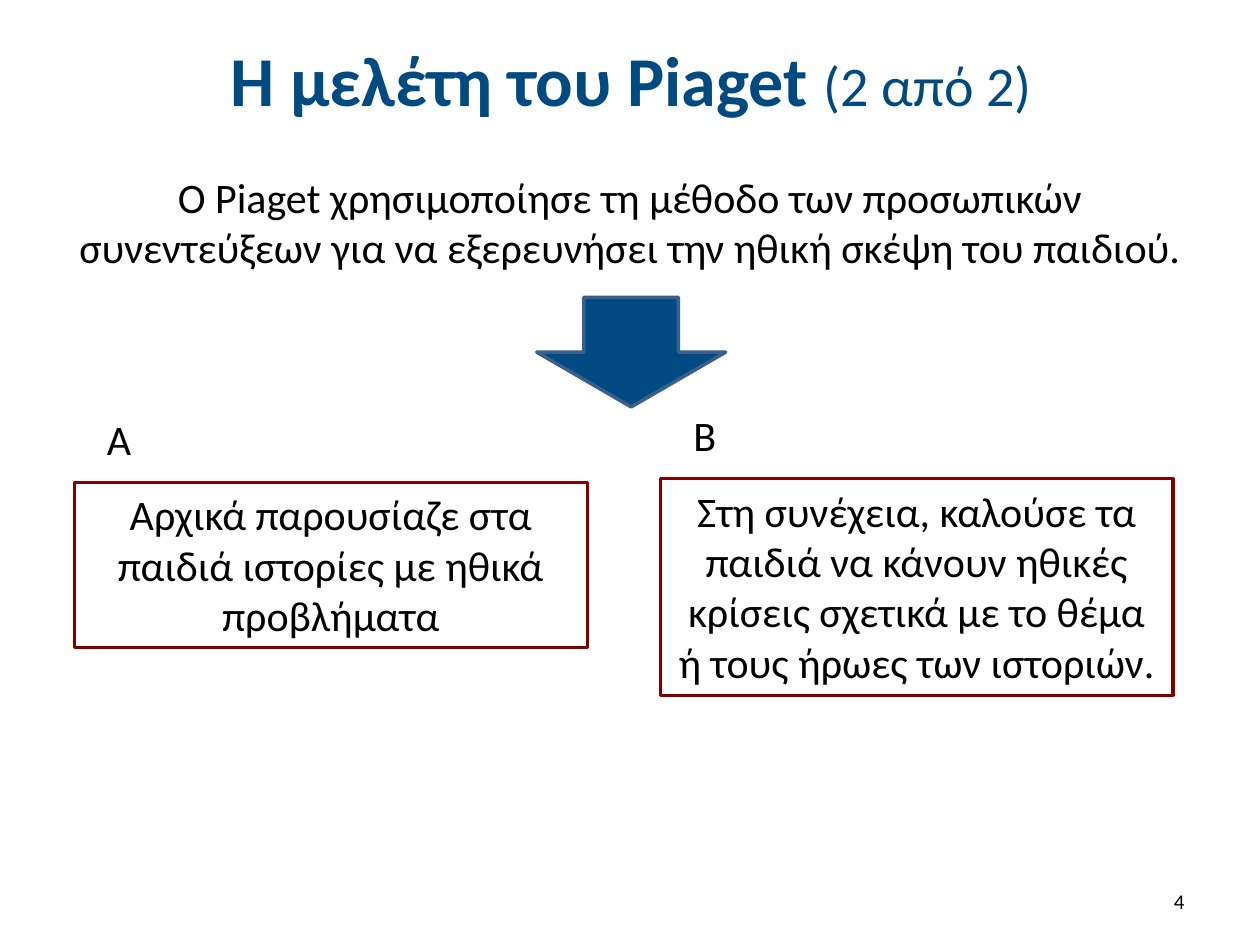
from pptx import Presentation
from pptx.dml.color import RGBColor
from pptx.enum.shapes import MSO_SHAPE
from pptx.enum.text import MSO_ANCHOR, MSO_AUTO_SIZE, PP_ALIGN
from pptx.util import Inches, Pt

BLUE = RGBColor(0x00, 0x4A, 0x82)
ARROW_EDGE = RGBColor(0x3A, 0x5F, 0x8C)
DARK_RED = RGBColor(0x82, 0x00, 0x00)
BLACK = RGBColor(0x00, 0x00, 0x00)

TOP, MIDDLE = MSO_ANCHOR.TOP, MSO_ANCHOR.MIDDLE
CENTER, RIGHT = PP_ALIGN.CENTER, PP_ALIGN.RIGHT
NO_FIT, GROW = MSO_AUTO_SIZE.NONE, MSO_AUTO_SIZE.SHAPE_TO_FIT_TEXT
RECTANGLE, DOWN_ARROW = MSO_SHAPE.RECTANGLE, MSO_SHAPE.DOWN_ARROW

TITLE_FORMAT = {"size": Pt(40), "bold": True}
COUNT_FORMAT = {"size": Pt(32), "bold": False}
BODY_FORMAT = {"size": Pt(24)}
NUMBER_FORMAT = {"size": Pt(12)}

INTRO = ("O Piaget χρησιμοποίησε τη μέθοδο των προσωπικών συνεντεύξεων "
         "για να εξερευνήσει την ηθική σκέψη του παιδιού.")
STEPS = [
    ("Α", "Αρχικά παρουσίαζε στα παιδιά ιστορίες με ηθικά προβλήματα",
     (0.51, 3.23, 0.87, 0.57), (0.59, 3.83, 4.07, 1.31)),
    ("Β", "Στη συνέχεια, καλούσε τα παιδιά να κάνουν ηθικές κρίσεις σχετικά "
     "με το θέμα ή τους ήρωες των ιστοριών.",
     (5.16, 3.20, 0.87, 0.57), (5.24, 3.80, 4.07, 1.72)),
]


def write(frame, runs, color=BLACK, align=CENTER, anchor=TOP, fit=NO_FIT, before=0):
    """Fill a text frame with one paragraph of (text, format) runs."""
    frame.word_wrap = True
    frame.auto_size = fit
    frame.vertical_anchor = anchor
    paragraph = frame.paragraphs[0]
    paragraph.alignment = align
    paragraph.space_before = Pt(before)
    for text, font_format in runs:
        run = paragraph.add_run()
        run.text = text
        run.font.name = "Calibri"
        run.font.color.rgb = color
        for key, value in font_format.items():
            setattr(run.font, key, value)


def add_text(slide, box, text, font_format, **options):
    """Add a text box at the given box in inches."""
    label = slide.shapes.add_textbox(*map(Inches, box))
    write(label.text_frame, [(text, font_format)], **options)


def add_outlined(slide, kind, box, edge, width):
    """Add a preset shape with a solid outline and no shadow."""
    shape = slide.shapes.add_shape(kind, *map(Inches, box))
    shape.shadow.inherit = False
    shape.line.color.rgb = edge
    shape.line.width = Pt(width)
    return shape


def place_title(slide, box):
    """Move and fill the title placeholder."""
    title = slide.shapes.title
    title.left, title.top, title.width, title.height = map(Inches, box)
    write(title.text_frame,
          [("Η μελέτη του Piaget ", TITLE_FORMAT), ("(2 από 2)", COUNT_FORMAT)],
          color=BLUE, anchor=MIDDLE)


def place_arrow(slide, box):
    """Add the arrow that leads from the introduction to the steps."""
    arrow = add_outlined(slide, DOWN_ARROW, box, ARROW_EDGE, 2)
    arrow.fill.solid()
    arrow.fill.fore_color.rgb = BLUE


def place_step(slide, letter, text, letter_box, frame_box):
    """Add a step: a framed text with its letter above."""
    step = add_outlined(slide, RECTANGLE, frame_box, DARK_RED, 1.75)
    step.fill.background()
    write(step.text_frame, [(text, BODY_FORMAT)], fit=GROW)
    add_text(slide, letter_box, letter, BODY_FORMAT, before=12)


def main():
    """Build and save the slide."""
    deck = Presentation()
    deck.slide_width, deck.slide_height = Inches(10), Inches(7.5)
    slide = deck.slides.add_slide(deck.slide_layouts.get_by_name("Title Only"))
    place_title(slide, (0.51, 0.13, 9, 0.99))
    add_text(slide, (0.5, 1.31, 9, 1.02), INTRO, BODY_FORMAT, before=12)
    add_text(slide, (7.17, 6.95, 2.33, 0.4), "4", NUMBER_FORMAT,
             align=RIGHT, anchor=MIDDLE)
    place_arrow(slide, (4.26, 2.36, 1.5, 0.87))
    for step in STEPS:
        place_step(slide, *step)
    deck.save("out.pptx")


if __name__ == "__main__":
    main()
